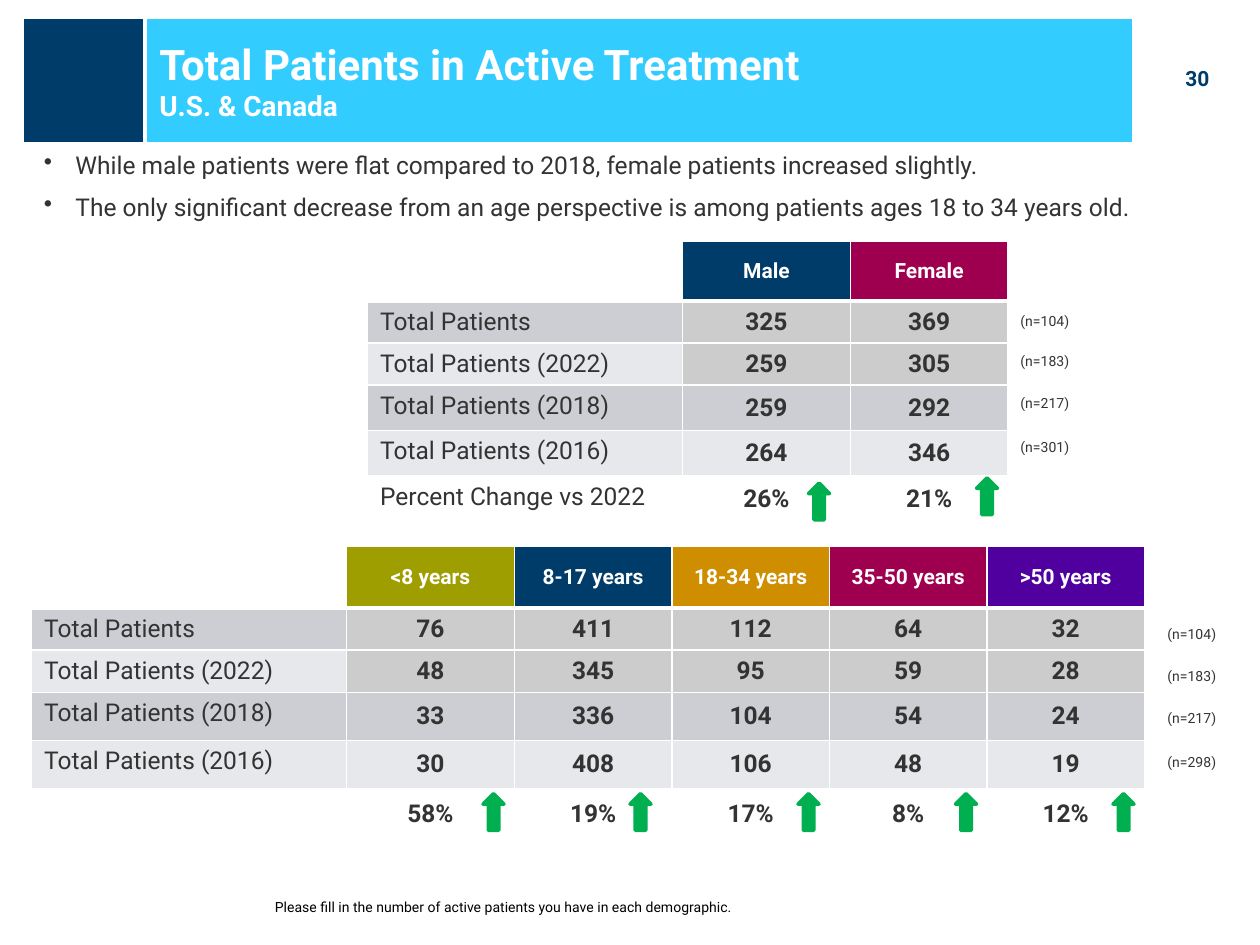
import pptx
import pptx.dml.color
import pptx.enum.shapes
import pptx.enum.text
import pptx.oxml
import pptx.oxml.ns
import pptx.util

Pt = pptx.util.Pt
ALIGN = pptx.enum.text.PP_ALIGN
ANCHOR = pptx.enum.text.MSO_ANCHOR
SHAPE = pptx.enum.shapes.MSO_SHAPE

NAVY, SKY, WHITE, INK = "003C69", "33CCFF", "FFFFFF", "333333"
OLIVE, AMBER, WINE, VIOLET = "9E9E00", "CE8E00", "9E004F", "4F009E"
GREEN, GREY, BAND, PALE = "00B050", "CCCCCC", "CCCED4", "E7E8EB"


def color(hex_value):
    return pptx.dml.color.RGBColor.from_string(hex_value)


def apply_format(target, values):
    for name, value in values.items():
        setattr(target, name, value)


class SlideBuilder:
    font_name = "Roboto"

    def __init__(self, slide):
        self.slide = slide

    def add_line(self, paragraph, text, size, ink=INK, bold=False, **layout):
        apply_format(paragraph, layout)
        run = paragraph.add_run()
        run.text = text
        apply_format(run.font, {"name": self.font_name, "size": Pt(size), "bold": bold})
        run.font.color.rgb = color(ink)

    def block(self, kind, left, top, width, height, fill, line, rotation=0):
        block = self.slide.shapes.add_shape(
            kind, Pt(left), Pt(top), Pt(width), Pt(height))
        block.shadow.inherit = False
        block.rotation = rotation
        block.fill.solid()
        block.fill.fore_color.rgb = color(fill)
        block.line.color.rgb = color(line)
        block.line.width = Pt(2)

    def rise_arrow(self, left, top):
        self.block(SHAPE.DOWN_ARROW, left, top, 12, 21, GREEN, GREEN, 180)

    def text(self, left, top, width, height, lines, anchor=ANCHOR.TOP, bullet=False):
        """Each line is a dict of arguments for add_line()."""
        frame = self.slide.shapes.add_textbox(
            Pt(left), Pt(top), Pt(width), Pt(height)).text_frame
        apply_format(frame, {"word_wrap": True, "vertical_anchor": anchor})
        for index, line in enumerate(lines):
            paragraph = frame.add_paragraph() if index else frame.paragraphs[0]
            if bullet:
                self.bullet(paragraph)
            self.add_line(paragraph, **line)

    def bullet(self, paragraph):
        properties = paragraph._p.get_or_add_pPr()
        properties.set("marL", str(Pt(18)))
        properties.set("indent", str(-Pt(18)))
        properties.append(pptx.oxml.parse_xml(
            f'<a:buChar {pptx.oxml.ns.nsdecls("a")} char="•"/>'))

    def borders(self, cell, bottom):
        properties = cell._tc.get_or_add_tcPr()
        for side, weight in (("L", 1), ("R", 1), ("T", 1), ("B", bottom)):
            properties.append(pptx.oxml.parse_xml(
                f'<a:ln{side} {pptx.oxml.ns.nsdecls("a")} w="{Pt(weight)}">'
                f'<a:solidFill><a:srgbClr val="{WHITE}"/></a:solidFill></a:ln{side}>'))

    def cell(self, cell, text, fill, bottom=1, **style):
        self.borders(cell, bottom)
        if fill:
            cell.fill.solid()
            cell.fill.fore_color.rgb = color(fill)
        else:
            cell.fill.background()
        if text:
            self.add_line(cell.text_frame.paragraphs[0], text, **style)

    def patient_table(self, left, top, heights, groups, rows):
        """groups: (heading, fill); rows: (label, label fill, value fill, values)."""
        widths = [180, 96] + [90] * (len(groups) - 1)
        table = self.slide.shapes.add_table(
            len(heights), len(widths), Pt(left), Pt(top),
            Pt(sum(widths)), Pt(sum(heights))).table
        table.horz_banding = False
        for column, width in zip(table.columns, widths):
            column.width = Pt(width)
        for row, height in zip(table.rows, heights):
            row.height = Pt(height)
        for c, (heading, fill) in enumerate([("", None)] + groups):
            head = table.cell(0, c)
            head.vertical_anchor = ANCHOR.MIDDLE
            self.cell(head, heading, fill, bottom=3, size=12, ink=WHITE,
                      bold=True, alignment=ALIGN.CENTER)
        for r, (label, label_fill, value_fill, values) in enumerate(rows, 1):
            self.cell(table.cell(r, 0), label, label_fill, size=14)
            for c, value in enumerate(values, 1):
                number = table.cell(r, c)
                number.vertical_anchor = ANCHOR.MIDDLE
                self.cell(number, value, value_fill, size=14, bold=True,
                          alignment=ALIGN.CENTER)

    def sample_sizes(self, left, tops, counts):
        for top, count in zip(tops, counts):
            self.text(left, top, 48, 17, [{"text": f"(n={count})", "size": 8}])


def survey_rows(totals, y2022, y2018, y2016, change, change_label=""):
    return [
        ("Total Patients", BAND, GREY, totals),
        ("Total Patients (2022)", PALE, GREY, y2022),
        ("Total Patients (2018)", BAND, BAND, y2018),
        ("Total Patients (2016)", PALE, PALE, y2016),
        (change_label, None, None, change),
    ]


def main():
    deck = pptx.Presentation()
    apply_format(deck, {"slide_width": Pt(720), "slide_height": Pt(540)})
    page = SlideBuilder(deck.slides.add_slide(deck.slide_layouts[6]))

    # Header band and page number
    page.block(SHAPE.RECTANGLE, 72, 10, 576, 72, SKY, WHITE)
    page.block(SHAPE.RECTANGLE, 12.5, 10, 70.5, 72, NAVY, WHITE)
    page.text(658, 34, 52.5, 21.5, [
        {"text": "30", "size": 12, "ink": NAVY, "bold": True,
         "alignment": ALIGN.CENTER}])
    page.text(84, 19, 564, 54, [
        {"text": "Total Patients in Active Treatment", "size": 24,
         "ink": WHITE, "bold": True},
        {"text": "U.S. & Canada", "size": 16, "ink": WHITE, "bold": True},
    ], anchor=ANCHOR.MIDDLE)

    # Findings
    page.text(18, 82, 696, 50, [
        {"text": "While male patients were flat compared to 2018, "
                 "female patients increased slightly.", "size": 14},
        {"text": "The only significant decrease from an age perspective is "
                 "among patients ages 18 to 34 years old.", "size": 14,
         "space_before": Pt(7.5)},
    ], bullet=True)

    # Patients by gender
    page.patient_table(
        210, 138, [34, 23.5, 23.5, 26, 26, 26],
        [("Male", NAVY), ("Female", WINE)],
        survey_rows(["325", "369"], ["259", "305"], ["259", "292"],
                    ["264", "346"], ["26%", "21%"], "Percent Change vs 2022"))
    page.sample_sizes(576, [175, 198, 222, 247], [104, 183, 217, 301])
    page.rise_arrow(462, 276)
    page.rise_arrow(558, 273)

    # Patients by age
    page.patient_table(
        18, 312, [35.5, 23.5, 24, 27.5, 27.5, 27.5],
        [("<8 years", OLIVE), ("8-17 years", NAVY), ("18-34 years", AMBER),
         ("35-50 years", WINE), (">50 years", VIOLET)],
        survey_rows(["76", "411", "112", "64", "32"],
                    ["48", "345", "95", "59", "28"],
                    ["33", "336", "104", "54", "24"],
                    ["30", "408", "106", "48", "19"],
                    ["58%", "19%", "17%", "8%", "12%"]))
    page.sample_sizes(660, [354, 378, 402, 427], [104, 183, 217, 298])
    for left in (276, 360, 456, 546, 636):
        page.rise_arrow(left, 453.5)

    # Footnote
    page.text(150, 510, 456, 17, [
        {"text": "Please fill in the number of active patients you have "
                 "in each demographic.", "size": 8, "ink": "000000"}])

    deck.save("out.pptx")


if __name__ == "__main__":
    main()
